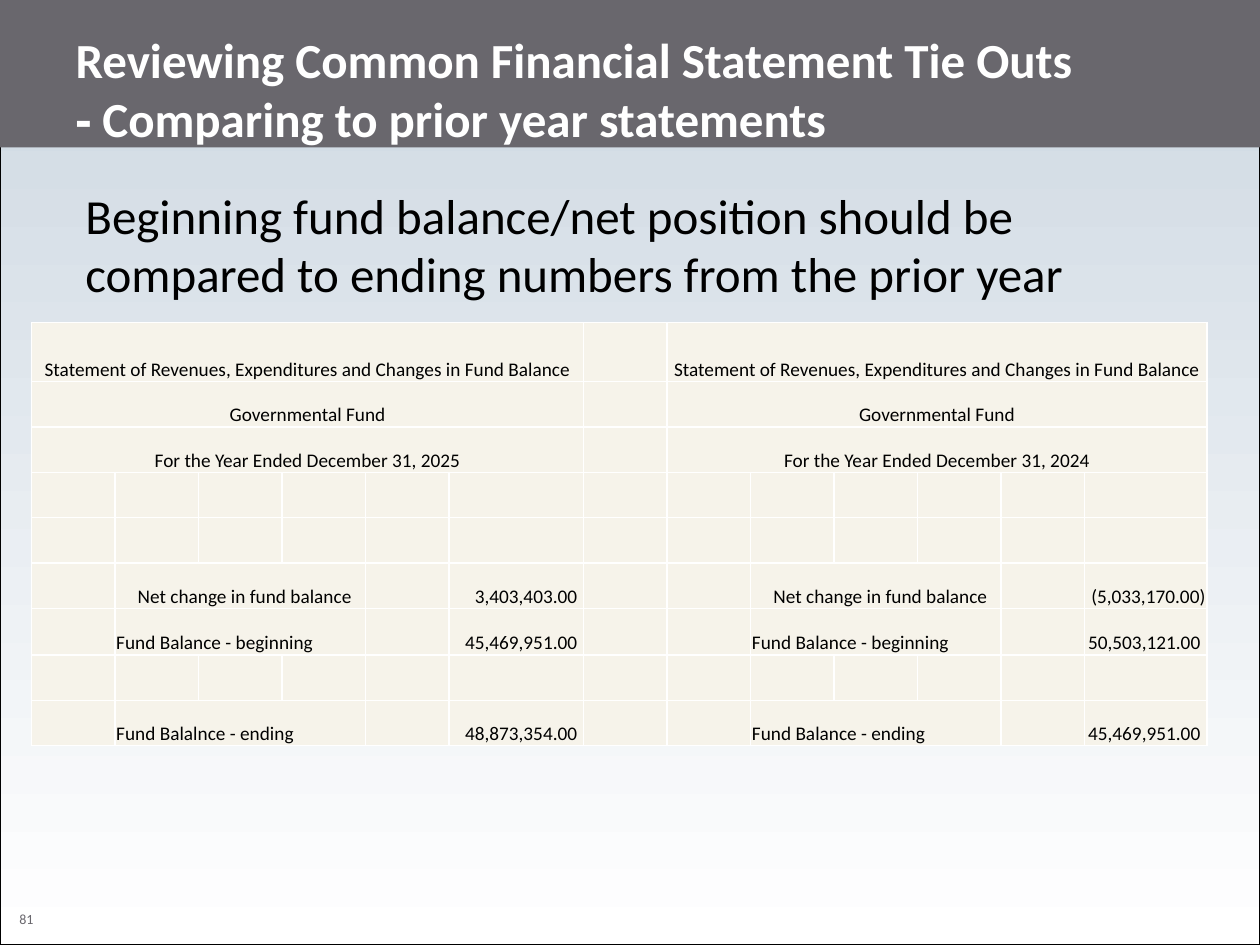
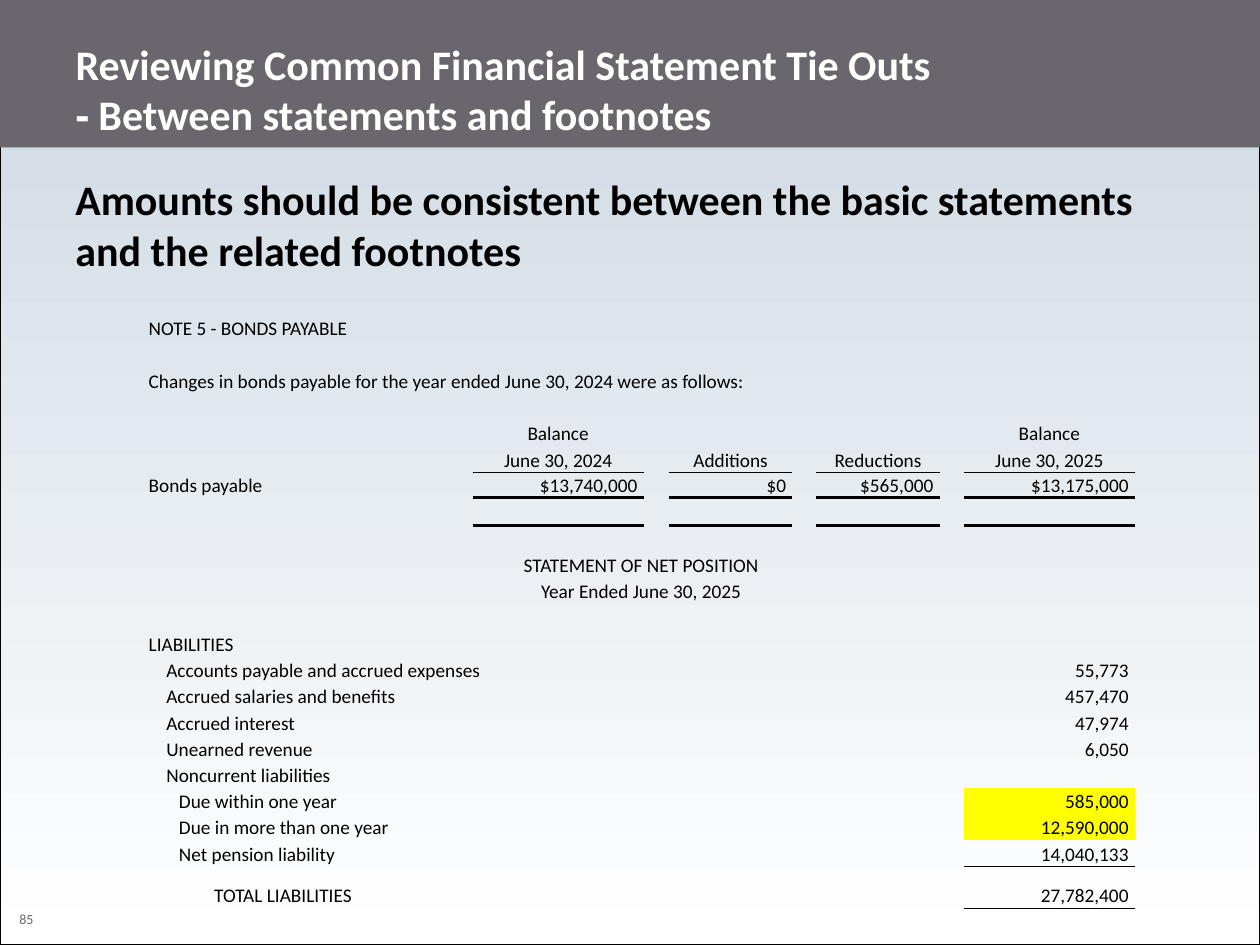
import dataclasses
import pptx
import pptx.dml.color
import pptx.enum.shapes
import pptx.enum.text
import pptx.oxml
import pptx.oxml.ns
import pptx.util

Inches = pptx.util.Inches
Pt = pptx.util.Pt
ALIGN = pptx.enum.text.PP_ALIGN
ANCHOR = pptx.enum.text.MSO_ANCHOR
EDGES = ("lnL", "lnR", "lnT", "lnB")
PLAIN_TABLE_STYLE = "{2D5ABB26-0587-4C30-8999-92F81FD0307C}"


@dataclasses.dataclass(frozen=True)
class Theme:
    font: str = "Calibri"
    slate: str = "69676D"
    sky: str = "CCD7E1"
    white: str = "FFFFFF"
    black: str = "000000"
    cream: str = "F6F3EA"
    yellow: str = "FFFF00"
    cell_size: float = 11
    number_size: float = 8
    cell_inset: float = 0.01
    figure_inset: float = 0.05
    thin: float = 0.5
    grid: float = 1
    thick: float = 2


THEME = Theme()


def rgb(code):
    return pptx.dml.color.RGBColor.from_string(code)


def apply(target, values):
    for name, value in values.items():
        setattr(target, name, value)


def write(frame, text, size, color=THEME.black, bold=False, align=ALIGN.LEFT):
    """Put one formatted paragraph in a text frame; a line feed breaks the line."""
    para = frame.paragraphs[0]
    para.alignment = align
    for index, line in enumerate(text.split("\n")):
        if index:
            para.add_line_break()
        span = para.add_run()
        span.text = line
        apply(span.font, {"name": THEME.font, "size": Pt(size), "bold": bold})
        span.font.color.rgb = rgb(color)


def add_text(page, box, text, size, **look):
    frame = page.shapes.add_textbox(*map(Inches, box)).text_frame
    frame.word_wrap = True
    write(frame, text, size, **look)


def add_rectangle(page, box, fill=None, line=None):
    kind = pptx.enum.shapes.MSO_SHAPE.RECTANGLE
    shape = page.shapes.add_shape(kind, *map(Inches, box))
    shape.shadow.inherit = False
    for part, color in ((shape.fill, fill), (shape.line.fill, line)):
        if color:
            part.solid()
            part.fore_color.rgb = rgb(color)
        else:
            part.background()
    if line:
        shape.line.width = Pt(0.75)


def paint_background(master):
    fill = master.background.fill
    fill.gradient()
    fill.gradient_angle = 270
    for stop, color, place in zip(fill.gradient_stops, (THEME.sky, THEME.white), (0, 1)):
        stop.color.rgb = rgb(color)
        stop.position = place


def add_page(deck, title_text, title_size, number):
    """Add a slide with the frame, band, page number and title."""
    page = deck.slides.add_slide(deck.slide_layouts[5])
    add_rectangle(page, (0, 0, 10, 7.5), line=THEME.black)
    add_text(page, (0, 7.18, 0.42, 0.24), number, THEME.number_size,
             color=THEME.slate, align=ALIGN.CENTER)
    add_rectangle(page, (0, 0, 10, 1.17), fill=THEME.slate)
    title = page.shapes.title
    apply(title, dict(zip(("left", "top", "width", "height"),
                          map(Inches, (0.5, 0.33, 9, 0.75)))))
    apply(title.text_frame, {"vertical_anchor": ANCHOR.MIDDLE, "word_wrap": True,
                             "auto_size": pptx.enum.text.MSO_AUTO_SIZE.NONE})
    write(title.text_frame, title_text, title_size, THEME.white, bold=True)
    page.shapes.element.append(title.element)  # bring the title above the band
    return page


def add_plain_table(page, left, top, widths, heights):
    box = (left, top, sum(widths), sum(heights))
    holder = page.shapes.add_table(len(heights), len(widths), *map(Inches, box))
    table = holder.table
    apply(table, {"first_row": False, "horz_banding": False})
    for style in holder.element.iter(pptx.oxml.ns.qn("a:tableStyleId")):
        style.text = PLAIN_TABLE_STYLE
    for column, width in zip(table.columns, widths):
        column.width = Inches(width)
    for row, height in zip(table.rows, heights):
        row.height = Inches(height)
    for cell in table.iter_cells():
        cell.fill.background()
        apply(cell, {"vertical_anchor": ANCHOR.BOTTOM, "margin_top": Inches(THEME.cell_inset),
                     "margin_bottom": 0, "margin_left": Inches(THEME.cell_inset),
                     "margin_right": Inches(THEME.cell_inset)})
        # keeps empty rows as low as the filled ones
        end = pptx.oxml.parse_xml(
            f'<a:endParaRPr {pptx.oxml.ns.nsdecls("a")} sz="{THEME.cell_size * 100}"/>')
        cell.text_frame.paragraphs[0]._p.append(end)
    return table


def fill_cell(cell, color):
    cell.fill.solid()
    cell.fill.fore_color.rgb = rgb(color)


def set_edge(cell, edge, color, width):
    properties = cell._tc.get_or_add_tcPr()
    earlier = [pptx.oxml.ns.qn("a:" + name) for name in EDGES[:EDGES.index(edge)]]
    place = sum(child.tag in earlier for child in properties)
    properties.insert(place, pptx.oxml.parse_xml(
        f'<a:{edge} {pptx.oxml.ns.nsdecls("a")} w="{Pt(width)}"><a:solidFill>'
        f'<a:srgbClr val="{color}"/></a:solidFill></a:{edge}>'))


def underline(table, row, column, width):
    """Rule off a cell, on both sides of the shared edge."""
    set_edge(table.cell(row, column), "lnB", THEME.black, width)
    if row + 1 < len(table.rows):
        set_edge(table.cell(row + 1, column), "lnT", THEME.black, width)


def put(table, row, column, text, span=1, align=ALIGN.LEFT, indent=0):
    cell = table.cell(row, column)
    if span > 1:
        cell.merge(table.cell(row, column + span - 1))
    cell.margin_left = Inches(THEME.cell_inset + indent)
    write(cell.text_frame, text, THEME.cell_size, align=align)


def put_figure(table, row, column, text):
    put(table, row, column, text, align=ALIGN.RIGHT)
    if not text.endswith(")"):
        table.cell(row, column).margin_right = Inches(THEME.figure_inset)


def add_fund_statements(page, left, top):
    """Two yearly statements side by side in one gridded table."""
    narrow = (9.33 - 1.07 - 0.97) / 11
    widths = [narrow] * 5 + [1.07] + [narrow] * 6 + [0.97]
    table = add_plain_table(page, left, top, widths, [0.47] + [0.36] * 5 + [0.37] + [0.36] * 2)
    statements = {
        0: ("2025", ("Net change in fund balance", "3,403,403.00"),
            ("Fund Balance - beginning", "45,469,951.00"),
            ("Fund Balalnce - ending", "48,873,354.00")),
        7: ("2024", ("Net change in fund balance", "(5,033,170.00)"),
            ("Fund Balance - beginning", "50,503,121.00"),
            ("Fund Balance - ending", "45,469,951.00")),
    }
    for start, (year, *lines) in statements.items():
        headings = ("Statement of Revenues, Expenditures and Changes in Fund Balance",
                    "Governmental Fund", f"For the Year Ended December 31, {year}")
        for row, heading in enumerate(headings):
            put(table, row, start, heading, span=6, align=ALIGN.CENTER)
        for row, indent, (label, amount) in zip((5, 6, 8), (0.17, 0, 0), lines):
            put(table, row, start + 1, label, span=3, indent=indent)
            put_figure(table, row, start + 5, amount)
    for cell in table.iter_cells():
        fill_cell(cell, THEME.cream)
        if not cell.is_spanned:
            for edge in EDGES:
                set_edge(cell, edge, THEME.white, THEME.grid)


def add_bond_note(table):
    put(table, 0, 0, "NOTE 5 - BONDS PAYABLE", span=2)
    put(table, 2, 0, "Changes in bonds payable for the year ended June 30, 2024 were as follows:",
        span=9)
    put(table, 6, 0, "Bonds payable")
    columns = (("Balance", "June 30, 2024", "$13,740,000"), ("", "Additions", "$0"),
               ("", "Reductions", "$565,000"), ("Balance", "June 30, 2025", "$13,175,000"))
    for column, (upper, lower, amount) in zip(range(2, 9, 2), columns):
        if upper:
            put(table, 4, column, upper, align=ALIGN.CENTER)
        put(table, 5, column, lower, align=ALIGN.CENTER)
        put_figure(table, 6, column, amount)
        underline(table, 5, column, THEME.thin)
        underline(table, 6, column, THEME.thick)


def add_net_position(table):
    for row, heading in ((9, "STATEMENT OF NET POSITION"), (10, "Year Ended June 30, 2025")):
        put(table, row, 0, heading, span=9, align=ALIGN.CENTER)
    item, detail, total = 0.14, 0.24, 0.52
    liabilities = (
        ("LIABILITIES", 0, 1, ""),
        ("Accounts payable and accrued expenses", item, 4, "55,773"),
        ("Accrued salaries and benefits", item, 3, "457,470"),
        ("Accrued interest", item, 2, "47,974"),
        ("Unearned revenue", item, 2, "6,050"),
        ("Noncurrent liabilities", item, 2, ""),
        ("Due within one year", detail, 2, "585,000"),
        ("Due in more than one year", detail, 3, "12,590,000"),
        ("Net pension liability", detail, 2, "14,040,133"),
        ("TOTAL LIABILITIES", total, 2, "27,782,400"),
    )
    for row, (label, indent, span, amount) in enumerate(liabilities, start=12):
        put(table, row, 0, label, span=span, indent=indent)
        if amount:
            put_figure(table, row, 8, amount)
        if label.startswith("Due"):
            fill_cell(table.cell(row, 8), THEME.yellow)
    for row in (20, 21):
        underline(table, row, 8, THEME.thin)


def add_footnote_tie_out(page, left, top):
    line = (4.71 - 0.2 - 0.22 - 0.33) / 19
    heights = [line] * 6 + [0.2, 0.22] + [line] * 13 + [0.33]
    table = add_plain_table(page, left, top,
                            [1.6, 0.98, 1.36, 0.19, 0.98, 0.19, 0.98, 0.19, 1.36], heights)
    add_bond_note(table)
    add_net_position(table)


def prior_year_page(deck):
    page = add_page(deck, "Reviewing Common Financial Statement Tie Outs\n"
                    "‐ Comparing to prior year statements", 28, "81")
    add_text(page, (0.58, 1.42, 9, 5.33), "Beginning fund balance/net position should be "
             "compared to ending numbers from the prior year", 28)
    add_fund_statements(page, 0.25, 2.56)


def footnotes_page(deck):
    page = add_page(deck, "Reviewing Common Financial Statement Tie Outs\n"
                    "‐ Between statements and footnotes", 24, "85")
    add_text(page, (0.5, 1.33, 9, 5.33), "Amounts should be consistent between the basic "
             "statements and the related footnotes", 24, bold=True)
    add_footnote_tie_out(page, 1.17, 2.5)


def main():
    deck = pptx.Presentation()
    apply(deck, {"slide_width": Inches(10), "slide_height": Inches(7.5)})
    paint_background(deck.slide_master)
    prior_year_page(deck)
    footnotes_page(deck)
    deck.save("out.pptx")


if __name__ == "__main__":
    main()
